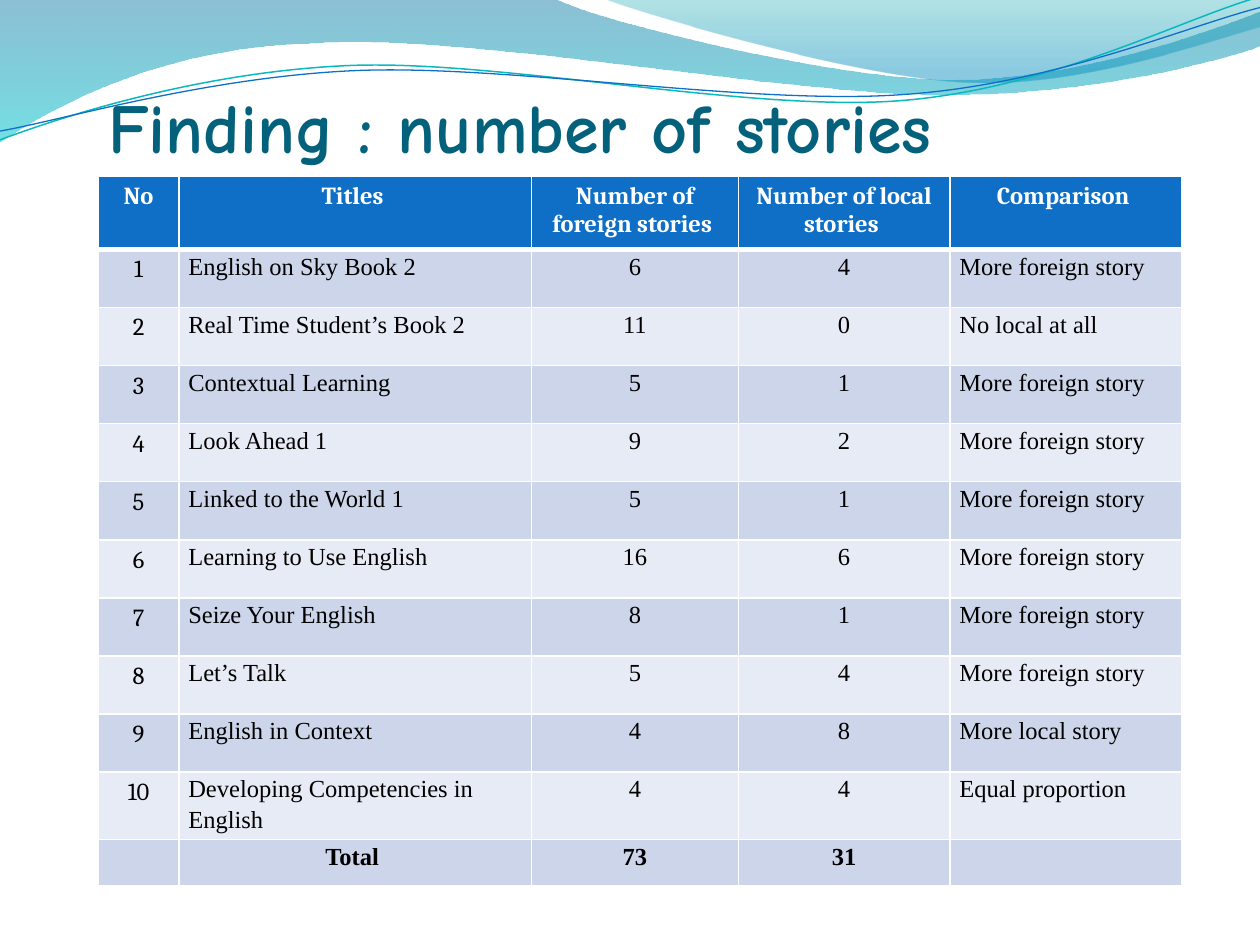
from dataclasses import dataclass
from math import cos, radians, sin

from lxml.etree import SubElement
from pptx import Presentation
from pptx.dml.color import RGBColor
from pptx.enum.text import MSO_ANCHOR as Anchor, PP_ALIGN as Align
from pptx.oxml import parse_xml
from pptx.oxml.ns import nsdecls, qn
from pptx.util import Inches, Pt


@dataclass(frozen=True)
class Theme:
    title: str = "04617B"
    header: str = "0F6FC6"
    teal: str = "0AB8BF"
    white: str = "FFFFFF"
    black: str = "000000"
    bands: tuple = ("CCD5EA", "E7EBF5")
    title_font: str = "Comic Neue"
    label_font: str = "Cambria"
    body_font: str = "Times New Roman"
    title_size: int = 40
    table_size: int = 14


THEME = Theme()

BROAD_WAVE = [
    (0, 0), (4.4, -0.01), (4.76, 0.17, 6.64, 0.63, 7.58, 0.63),
    (8.53, 0.63, 9.58, 0.26, 10, 0.09), (10.01, 0.36),
    (9.83, 0.44, 8.7, 0.76, 7.46, 0.75), (6.22, 0.75, 3.82, 0.28, 2.57, 0.34),
    (1.29, 0.36, 0.46, 0.83, -0.01, 1.13), (0, 0),
]
RIGHT_WAVE = [
    (4.79, -0.01), (5.09, 0.11, 6.82, 0.62, 7.69, 0.65),
    (8.56, 0.69, 9.61, 0.32, 10, 0.21), (10, 0), (4.79, -0.01),
]
TEAL_CURVE = [
    (0, 1.11), (0.48, 0.93, 1.58, 0.57, 2.77, 0.52),
    (3.95, 0.47, 5.93, 0.89, 7.13, 0.8), (8.33, 0.71, 9.38, 0.15, 9.98, -0.02),
]
BLUE_CURVE = [
    (0, 1.04), (0.47, 0.96, 1.64, 0.61, 2.83, 0.56),
    (4.03, 0.51, 5.97, 0.84, 7.17, 0.75), (8.36, 0.67, 9.41, 0.21, 10, 0.06),
]
CURVE_TILT = -2.7
CURVE_CENTER = (4.99, 0.58)

HEADINGS = ["No", "Titles ", "Number of foreign stories ",
            "Number of local stories ", "Comparison "]
BOOKS = [
    ("English on Sky Book 2", 6, 4, "More foreign story"),
    ("Real Time Student’s Book 2", 11, 0, "No local at all"),
    ("Contextual Learning", 5, 1, "More foreign story"),
    ("Look Ahead 1", 9, 2, "More foreign story"),
    ("Linked to the World 1", 5, 1, "More foreign story"),
    ("Learning to Use English", 16, 6, "More foreign story"),
    ("Seize Your English", 8, 1, "More foreign story"),
    ("Let’s Talk", 5, 4, "More foreign story"),
    ("English in Context", 4, 8, "More local story"),
    ("Developing Competencies in English", 4, 4, "Equal proportion"),
]
COLUMN_SHARES = [0.64, 2.8, 1.64, 1.68, 1.84]
ROW_SHARES = [0.58] + [0.46] * 9 + [0.52, 0.37]


def rgb(color):
    return RGBColor.from_string(color)


def write_text(frame, text, *, font, size, color, bold=False,
               align=Align.LEFT, spacing=None):
    paragraph = frame.paragraphs[0]
    paragraph.alignment = align
    paragraph.line_spacing = spacing
    run = paragraph.add_run()
    run.text = text
    run.font.name = font
    run.font.size = Pt(size)
    run.font.bold = bold
    run.font.color.rgb = rgb(color)


def turn(point, angle):
    (x, y), (center_x, center_y) = point, CURVE_CENTER
    across, down = x - center_x, y - center_y
    c, s = cos(radians(angle)), sin(radians(angle))
    return center_x + across * c - down * s, center_y + across * s + down * c


def add_outline(slide, left, top, outline, closed, tilt=0):
    points = [turn(segment[i:i + 2], -tilt)
              for segment in outline for i in range(0, len(segment), 2)]
    points = [(left + Inches(x), top + Inches(y)) for x, y in points]
    builder = slide.shapes.build_freeform(*points[0], scale=1)
    builder.add_line_segments(points[1:], close=closed)
    shape = builder.convert_to_shape()
    shape.shadow.inherit = False
    shape.rotation = tilt
    lines = iter(shape._element.spPr.findall(".//" + qn("a:lnTo")))
    for segment in outline[1:]:
        line = next(lines)
        if len(segment) == 6:
            curve = parse_xml(f'<a:cubicBezTo {nsdecls("a")}/>')
            line.addprevious(curve)
            for part in (line, next(lines), next(lines)):
                curve.append(part[0])
                part.getparent().remove(part)
    return shape


def add_wave(slide, left, top, outline, stops):
    shape = add_outline(slide, left, top, outline, True)
    shape.line.fill.background()
    shape.fill.gradient()
    shape.fill.gradient_angle = 270
    for stop, (position, color, _) in zip(shape.fill.gradient_stops, stops):
        stop.position = position
        stop.color.rgb = rgb(color)
    colors = shape._element.spPr.findall(".//" + qn("a:srgbClr"))
    for element, (_, _, opacity) in zip(colors, stops):
        SubElement(element, qn("a:alpha")).set("val", str(opacity * 1000))


def add_curve(slide, left, top, outline, color, width):
    shape = add_outline(slide, left, top, outline, False, CURVE_TILT)
    shape.fill.background()
    shape.line.color.rgb = rgb(color)
    shape.line.width = Pt(width)


def add_banner(slide, left, top):
    add_wave(slide, left, top, BROAD_WAVE, [(0, "0074A1", 45), (1, "00C6CF", 55)])
    add_wave(slide, left, top, RIGHT_WAVE, [(0, "00A1A9", 30), (0.8, "008BBF", 45)])
    add_curve(slide, left, top, TEAL_CURVE, THEME.teal, 0.85)
    add_curve(slide, left, top, BLUE_CURVE, THEME.header, 0.75)


def add_title(slide, left, top, width, height):
    frame = slide.shapes.add_textbox(left, top, width, height).text_frame
    frame.word_wrap = True
    frame.vertical_anchor = Anchor.BOTTOM
    frame.margin_left = frame.margin_right = frame.margin_bottom = 0
    write_text(frame, "Finding : number of stories", font=THEME.title_font,
               size=THEME.title_size, color=THEME.title, bold=True)


def set_borders(cell, top=1, bottom=1):
    properties = cell._tc.get_or_add_tcPr()
    widths = {"lnL": 1, "lnR": 1, "lnT": top, "lnB": bottom}
    for index, (side, width) in enumerate(widths.items()):
        properties.insert(index, parse_xml(
            f'<a:{side} {nsdecls("a")} w="{Pt(width)}"><a:solidFill>'
            f'<a:srgbClr val="{THEME.white}"/></a:solidFill></a:{side}>'))


def fill_cell(cell, text, row, column, last_row):
    header, total, label = row == 0, row == last_row, column == 0
    cell.fill.solid()
    cell.fill.fore_color.rgb = rgb(THEME.header if header else THEME.bands[(row - 1) % 2])
    set_borders(cell, top=3 if row == 1 else 1, bottom=3 if header else 1)
    body = not header and not label
    if body or total:
        cell.margin_left = cell.margin_right = Pt(5.4)
        cell.margin_top = cell.margin_bottom = 0
    if not text:
        ending = SubElement(cell.text_frame.paragraphs[0]._p, qn("a:endParaRPr"))
        ending.set("sz", str(THEME.table_size * 100))
        return
    left_aligned = body and not total and column in (1, 4)
    write_text(cell.text_frame, text,
               font=THEME.body_font if body else THEME.label_font,
               size=THEME.table_size,
               color=THEME.white if header else THEME.black,
               bold=header or total,
               align=Align.LEFT if left_aligned else Align.CENTER,
               spacing=1.15 if body else None)


def add_story_table(slide, left, top, width, height):
    foreign, local = (sum(book[index] for book in BOOKS) for index in (1, 2))
    numbered = [(number, *book) for number, book in enumerate(BOOKS, 1)]
    rows = [HEADINGS, *numbered, ("", "Total ", foreign, local, "")]
    table = slide.shapes.add_table(len(rows), len(HEADINGS), left, top, width, height).table
    table.first_row = table.horz_banding = False
    for column, share in zip(table.columns, COLUMN_SHARES):
        column.width = int(width * share / sum(COLUMN_SHARES))
    for row, share in zip(table.rows, ROW_SHARES):
        row.height = int(height * share / sum(ROW_SHARES))
    for row, values in enumerate(rows):
        for column, value in enumerate(values):
            fill_cell(table.cell(row, column), str(value), row, column, len(rows) - 1)


def main():
    presentation = Presentation()
    presentation.slide_width, presentation.slide_height = Inches(10), Inches(7.5)
    slide = presentation.slides.add_slide(presentation.slide_layouts[6])
    add_banner(slide, Inches(0), Inches(0))
    add_title(slide, Inches(0.86), Inches(0.39), Inches(8.64), Inches(0.94))
    add_story_table(slide, Inches(0.78), Inches(1.4), Inches(8.6), Inches(5.62))
    presentation.save("out.pptx")


if __name__ == "__main__":
    main()
